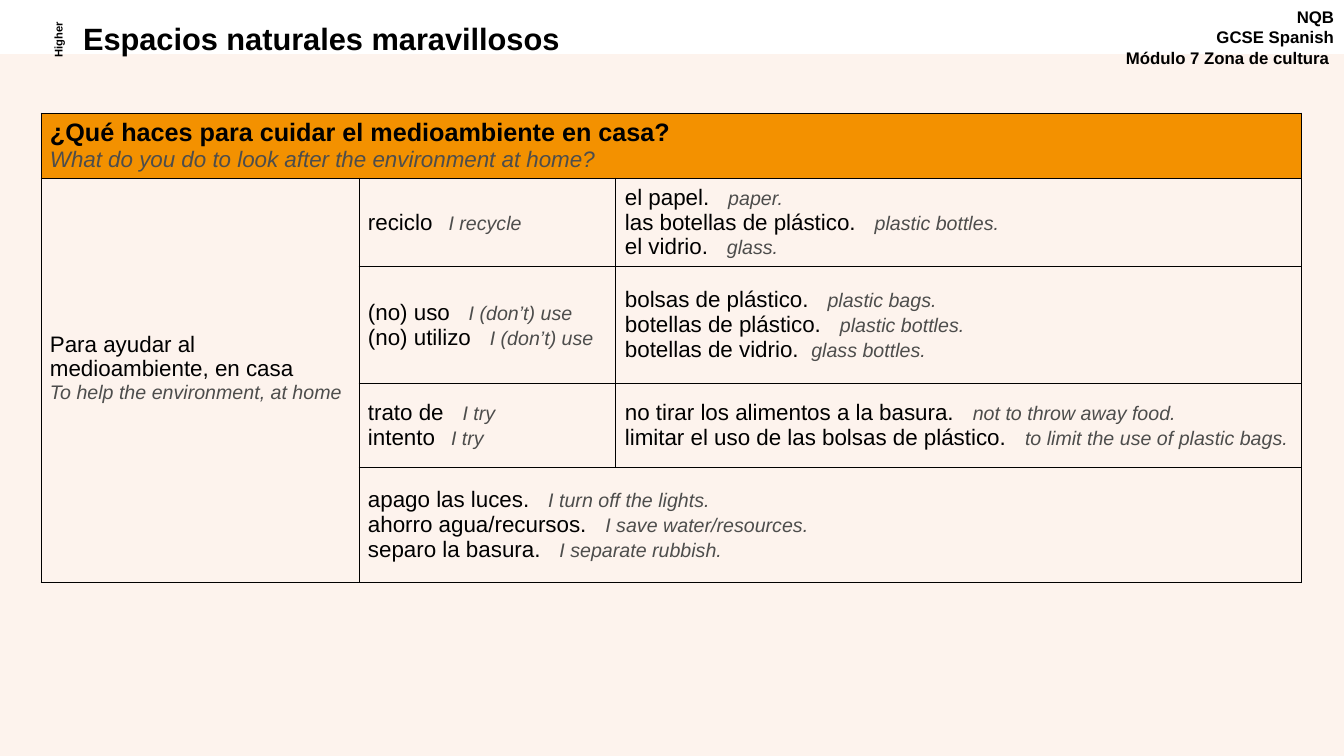
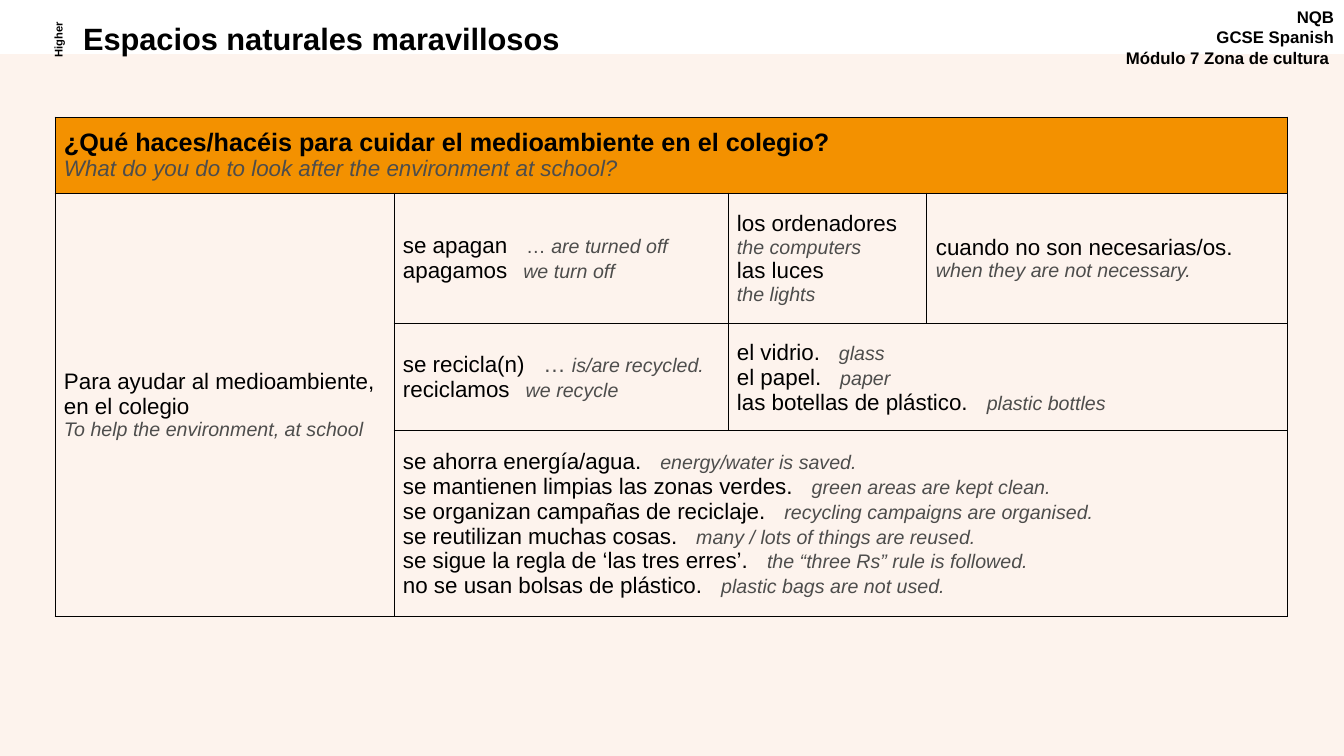
from dataclasses import dataclass

from lxml.etree import SubElement
from pptx import Presentation
from pptx.dml.color import RGBColor
from pptx.enum.shapes import MSO_SHAPE
from pptx.enum.text import MSO_ANCHOR, MSO_AUTO_SIZE, PP_ALIGN
from pptx.oxml.ns import qn
from pptx.util import Emu, Pt

SLIDE_W, SLIDE_H = 1344, 756
EMU_PER_PX = 12192000 / SLIDE_W


@dataclass(frozen=True)
class Theme:
    font: str = "Arial"
    ink: str = "000000"
    muted: str = "4D4D4C"
    page: str = "FDF3ED"
    accent: str = "F39100"
    title: int = 22
    question: int = 18
    spanish: int = 16
    english: int = 14
    header: int = 12
    tier: int = 8
    border: float = 0.75
    gap: float = 9
    gap_narrow: float = 7
    gap_tight: float = 4.5


THEME = Theme()


@dataclass(frozen=True)
class Line:
    """Spanish phrase, a gap, and its English gloss with an optional upright lead-in."""
    es: str = ""
    en: str = ""
    gap: float = THEME.gap
    lead: str = ""
    lead_size: int = THEME.english


@dataclass(frozen=True)
class Cell:
    row: int
    col: int
    lines: list
    rows: int = 1
    cols: int = 1
    pad_bottom: int = 4


@dataclass(frozen=True)
class Grid:
    left: int
    top: int
    cols: list
    rows: list
    question: tuple
    cells: list


HOME = Grid(
    41, 113, [318, 257, 686], [62, 83, 117, 84, 115],
    ("¿Qué haces para cuidar el medioambiente en casa?",
     "What do you do to look after the environment at home?"),
    [
        Cell(1, 0, [Line("Para ayudar al medioambiente, en casa"),
                    Line(en="To help the environment, at home")],
             rows=4, pad_bottom=29),
        Cell(1, 1, [Line("reciclo", "I recycle", THEME.gap_narrow)]),
        Cell(1, 2, [Line("el papel.", "paper."),
                    Line("las botellas de plástico.", "plastic bottles."),
                    Line("el vidrio.", "glass.")]),
        Cell(2, 1, [Line("(no) uso", "I (don’t) use"),
                    Line("(no) utilizo", "I (don’t) use")]),
        Cell(2, 2, [Line("bolsas de plástico.", "plastic bags."),
                    Line("botellas de plástico.", "plastic bottles."),
                    Line("botellas de vidrio.", "glass bottles.", THEME.gap_tight)]),
        Cell(3, 1, [Line("trato de", "I try"),
                    Line("intento", "I try", THEME.gap_narrow)]),
        Cell(3, 2, [Line("no tirar los alimentos a la basura.", "not to throw away food."),
                    Line("limitar el uso de las bolsas de plástico.",
                         "to limit the use of plastic bags.")]),
        Cell(4, 1, [Line("apago las luces.", "I turn off the lights."),
                    Line("ahorro agua/recursos.", "I save water/resources."),
                    Line("separo la basura.", "I separate rubbish.")], cols=2),
    ])

SCHOOL = Grid(
    55, 117, [339, 334, 199, 361], [76, 131, 107, 186],
    ("¿Qué haces/hacéis para cuidar el medioambiente en el colegio?",
     "What do you do to look after the environment at school?"),
    [
        Cell(1, 0, [Line("Para ayudar al medioambiente, en el colegio"),
                    Line(en="To help the environment, at school")], rows=3),
        Cell(1, 1, [Line("se apagan", "are turned off", lead="… "),
                    Line("apagamos", "we turn off", THEME.gap_narrow)]),
        Cell(1, 2, [Line("los ordenadores"), Line(en="the computers"),
                    Line("las luces"), Line(en="the lights")]),
        Cell(1, 3, [Line("cuando no son necesarias/os."),
                    Line(en="when they are not necessary.")]),
        Cell(2, 1, [Line("se recicla(n)", "is/are recycled.",
                         lead="… ", lead_size=THEME.spanish),
                    Line("reciclamos", "we recycle", THEME.gap_narrow)]),
        Cell(2, 2, [Line("el vidrio.", "glass"),
                    Line("el papel.", "paper"),
                    Line("las botellas de plástico.", "plastic bottles")], cols=2),
        Cell(3, 1, [Line("se ahorra energía/agua.", "energy/water is saved."),
                    Line("se mantienen limpias las zonas verdes.",
                         "green areas are kept clean."),
                    Line("se organizan campañas de reciclaje.",
                         "recycling campaigns are organised."),
                    Line("se reutilizan muchas cosas.",
                         "many / lots of things are reused."),
                    Line("se sigue la regla de ‘las tres erres’.",
                         "the “three Rs” rule is followed."),
                    Line("no se usan bolsas de plástico.",
                         "plastic bags are not used.")], cols=3),
    ])


def px(n):
    return Emu(round(n * EMU_PER_PX))


def rgb(color):
    return RGBColor.from_string(color)


def style(font, size, color=THEME.ink, bold=False, italic=False):
    font.name, font.size = THEME.font, Pt(size)
    font.bold, font.italic = bold, italic
    font.color.rgb = rgb(color)


def write_paragraphs(tf, texts, size, align):
    tf.word_wrap = True
    for i, text in enumerate(texts):
        p = tf.add_paragraph() if i else tf.paragraphs[0]
        p.text, p.alignment = text, align
        style(p.font, size, bold=True)


def add_label(s, box, texts, size, align, rotation=0):
    sp = s.shapes.add_textbox(*map(px, box))
    sp.rotation = rotation
    write_paragraphs(sp.text_frame, texts, size, align)


def add_frame(s):
    """Page panel, title, course header and tier label of every slide."""
    panel = s.shapes.add_shape(MSO_SHAPE.RECTANGLE, *map(px, (0, 54, SLIDE_W, SLIDE_H - 54)))
    panel.shadow.inherit = False
    panel.fill.solid()
    panel.fill.fore_color.rgb = rgb(THEME.page)
    panel.line.fill.background()
    s.shapes._spTree.insert(2, panel._element)

    title = s.shapes.title
    title.left, title.top, title.width, title.height = map(px, (73, 19, 860, 43))
    tf = title.text_frame
    write_paragraphs(tf, ["Espacios naturales maravillosos"], THEME.title, PP_ALIGN.LEFT)
    tf.auto_size, tf.vertical_anchor = MSO_AUTO_SIZE.NONE, MSO_ANCHOR.TOP
    tf.paragraphs[0].line_spacing = 0.9
    tf.paragraphs[0].space_before = Pt(0)

    add_label(s, (1108, 2, 236, 78), ["NQB", "GCSE Spanish", "Módulo 7 Zona de cultura "],
              THEME.header, PP_ALIGN.RIGHT)
    add_label(s, (18, 29, 79, 22), ["Higher"], THEME.tier, PP_ALIGN.CENTER, 270)


def add_run(p, text, size, **look):
    r = p.add_run()
    r.text = text
    style(r.font, size, **look)
    return r


def write_line(p, line):
    if line.es:
        add_run(p, line.es, THEME.spanish)
    if line.es and line.en:
        space = add_run(p, " ", THEME.spanish)
        space._r.get_or_add_rPr().set("spc", str(round(line.gap * 100)))
    if line.lead:
        add_run(p, line.lead, line.lead_size, color=THEME.muted)
    if line.en:
        add_run(p, line.en, THEME.english, color=THEME.muted, italic=True)


def set_borders(cell):
    tc_pr = cell._tc.get_or_add_tcPr()
    for i, side in enumerate(("lnL", "lnR", "lnT", "lnB")):
        ln = SubElement(tc_pr, qn(f"a:{side}"), w=str(Pt(THEME.border)))
        SubElement(SubElement(ln, qn("a:solidFill")), qn("a:srgbClr"), val=THEME.ink)
        tc_pr.insert(i, ln)


def format_cell(cell, pad_bottom=4):
    cell.vertical_anchor = MSO_ANCHOR.MIDDLE
    cell.margin_left = cell.margin_right = px(9)
    cell.margin_top, cell.margin_bottom = px(4), px(pad_bottom)


def write_question(cell, question):
    es, en = question
    format_cell(cell)
    cell.fill.solid()
    cell.fill.fore_color.rgb = rgb(THEME.accent)
    tf = cell.text_frame
    tf.text = es
    style(tf.paragraphs[0].font, THEME.question, bold=True)
    p = tf.add_paragraph()
    p.text = en
    style(p.font, THEME.spanish, THEME.muted, italic=True)


def add_grid(s, grid):
    frame = s.shapes.add_table(
        len(grid.rows), len(grid.cols), px(grid.left), px(grid.top),
        px(sum(grid.cols)), px(sum(grid.rows)))
    table = frame.table
    table.first_row = table.horz_banding = False
    for column, width in zip(table.columns, grid.cols):
        column.width = px(width)
    for row, height in zip(table.rows, grid.rows):
        row.height = px(height)
    for cell in table.iter_cells():
        cell.fill.background()

    table.cell(0, 0).merge(table.cell(0, len(grid.cols) - 1))
    write_question(table.cell(0, 0), grid.question)
    for item in grid.cells:
        cell = table.cell(item.row, item.col)
        if item.rows > 1 or item.cols > 1:
            cell.merge(table.cell(item.row + item.rows - 1, item.col + item.cols - 1))
        format_cell(cell, item.pad_bottom)
        tf = cell.text_frame
        for i, line in enumerate(item.lines):
            write_line(tf.add_paragraph() if i else tf.paragraphs[0], line)
    for cell in table.iter_cells():
        set_borders(cell)


def main():
    prs = Presentation()
    prs.slide_width, prs.slide_height = px(SLIDE_W), px(SLIDE_H)
    for grid in (HOME, SCHOOL):
        s = prs.slides.add_slide(prs.slide_layouts[5])
        add_frame(s)
        add_grid(s, grid)
    prs.save("out.pptx")


if __name__ == "__main__":
    main()
